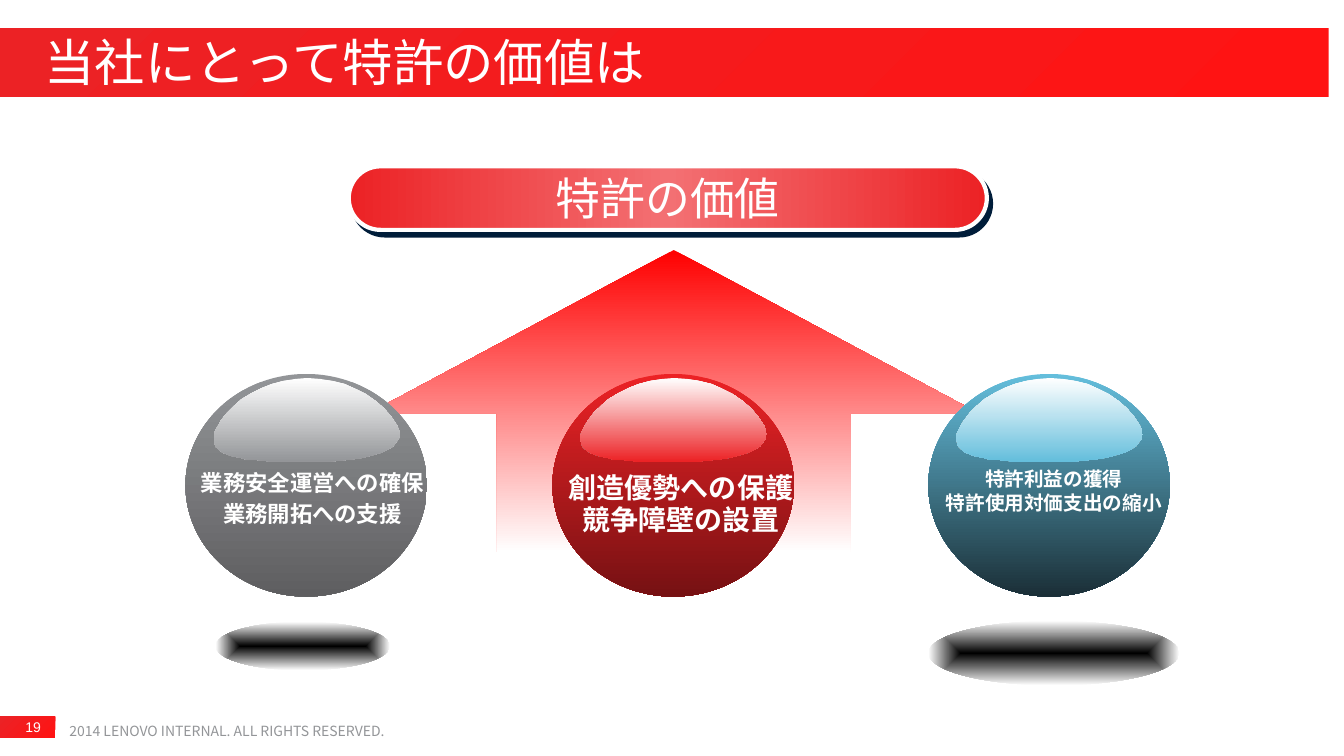
from lxml import etree
from pptx import Presentation
from pptx.dml.color import RGBColor
from pptx.enum.shapes import MSO_SHAPE
from pptx.enum.text import MSO_ANCHOR, PP_ALIGN
from pptx.oxml.ns import qn
from pptx.util import Pt

LEFT, CENTER = PP_ALIGN.LEFT, PP_ALIGN.CENTER
TOP, MIDDLE = MSO_ANCHOR.TOP, MSO_ANCHOR.MIDDLE
RECTANGLE, OVAL = MSO_SHAPE.RECTANGLE, MSO_SHAPE.OVAL
PILL, UP_ARROW = MSO_SHAPE.ROUNDED_RECTANGLE, MSO_SHAPE.UP_ARROW

WHITE = RGBColor(0xFF, 0xFF, 0xFF)
BLACK = RGBColor(0x00, 0x00, 0x00)
RED = RGBColor(0xEC, 0x22, 0x25)
BRIGHT_RED = RGBColor(0xFF, 0x13, 0x13)
PURE_RED = RGBColor(0xFF, 0x00, 0x00)
PALE_RED = RGBColor(0xF3, 0x70, 0x73)
DARK_RED = RGBColor(0x76, 0x11, 0x13)
GRAY = RGBColor(0x93, 0x95, 0x98)
DARK_GRAY = RGBColor(0x5E, 0x5E, 0x60)
BLUE = RGBColor(0x64, 0xBE, 0xDC)
DARK_BLUE = RGBColor(0x1B, 0x2F, 0x37)
NAVY = RGBColor(0x00, 0x1D, 0x3A)

JP, SC, LATIN = "Noto Sans CJK JP", "Noto Sans CJK SC", "Arial"

# Content
TITLE = "当社にとって特許の価値は"
GOAL = "特許の価値"
PAGE_NUMBER = "19"
COPYRIGHT = "2014 LENOVO INTERNAL. ALL RIGHTS RESERVED."

BALLS = [
    dict(left=132.5, light=GRAY, dark=DARK_GRAY,
         lines=["業務安全運営への確保", "業務開拓への支援"],
         text_box=(331.7, 181.4, 49.7),
         style=dict(size=16, font=JP, line_height=19, space_before=3.2),
         ground=(154, 444.2, 124.6, 34.6)),
    dict(left=394.6, light=RED, dark=DARK_RED,
         lines=["創造優勢への保護", "競争障壁の設置"],
         text_box=(332.7, 183.6, 55.4),
         style=dict(size=20, font=SC, line_height=23.5),
         ground=None),
    dict(left=663.1, light=BLUE, dark=DARK_BLUE,
         lines=["特許利益の獲得", "特許使用対価支出の縮小"],
         text_box=(330.1, 179.3, 41),
         style=dict(size=14, font=JP, line_height=17),
         ground=(663.1, 443.5, 179.3, 46.1)),
]
BALL_TOP, BALL_WIDTH, BALL_HEIGHT = 267.1, 172.5, 159

# Outline of the gloss on each ball, in units of GLOSS_UNIT points
GLOSS_UNIT = 0.72
GLOSS_OFFSET = (20, 2.9)
GLOSS = [
    (182, 47), (184, 52), (185, 56), (184, 60), (181, 64), (178, 68),
    (173, 71), (167, 74), (160, 76), (153, 78), (144, 80), (135, 81),
    (125, 82), (115, 83), (66, 83), (57, 83), (49, 82), (40, 81), (33, 81),
    (26, 79), (20, 78), (14, 76), (9, 74), (5, 71), (2, 68), (1, 65),
    (0, 61), (0, 57), (2, 52), (7, 43), (13, 35), (20, 28), (28, 21),
    (38, 15), (48, 10), (58, 6), (69, 3), (81, 1), (93, 0), (106, 1),
    (118, 3), (130, 6), (141, 11), (151, 16), (161, 23), (169, 30), (176, 38),
]


def paint_gradient(shape, colors, angle=None, path=None, focus=None):
    """Spread colors evenly, along an angle or outward from a focus."""
    shape.fill.solid()
    solid = shape._element.spPr.find(qn("a:solidFill"))
    gradient = etree.Element(qn("a:gradFill"), rotWithShape="1")
    stops = etree.SubElement(gradient, qn("a:gsLst"))
    for index, color in enumerate(colors):
        position = index * 100000 // (len(colors) - 1)
        stop = etree.SubElement(stops, qn("a:gs"), pos=str(position))
        etree.SubElement(stop, qn("a:srgbClr"), val=str(color))
    if path is None:
        etree.SubElement(gradient, qn("a:lin"), ang=str(angle * 60000), scaled="0")
    else:
        way = etree.SubElement(gradient, qn("a:path"), path=path)
        edges = {side: str(share * 1000) for side, share in zip("ltrb", focus)}
        etree.SubElement(way, qn("a:fillToRect"), **edges)
    solid.getparent().replace(solid, gradient)
    shape.line.fill.background()
    shape.shadow.inherit = False


def add_shape(kind, box, colors, **gradient):
    shape = slide.shapes.add_shape(kind, *map(Pt, box))
    paint_gradient(shape, colors, **gradient)
    return shape


def write(shape, lines, size, font, color=WHITE, bold=False, align=CENTER,
          anchor=TOP, wrap=True, insets=(7.2, 3.6), line_height=None,
          space_before=0):
    frame = shape.text_frame
    frame.word_wrap = wrap
    frame.vertical_anchor = anchor
    frame.margin_left = frame.margin_right = Pt(insets[0])
    frame.margin_top = frame.margin_bottom = Pt(insets[1])
    for index, line in enumerate(lines):
        paragraph = frame.add_paragraph() if index else frame.paragraphs[0]
        paragraph.alignment = align
        if line_height:
            paragraph.line_spacing = Pt(line_height)
        if index and space_before:
            paragraph.space_before = Pt(space_before)
        run = paragraph.add_run()
        run.text = line
        run.font.size = Pt(size)
        run.font.bold = bold
        run.font.color.rgb = color
        run.font.name = font
        etree.SubElement(run._r.get_or_add_rPr(), qn("a:ea"), typeface=font)


def add_text(box, lines, **style):
    write(slide.shapes.add_textbox(*map(Pt, box)), lines, **style)


def add_ball(ball):
    left = ball["left"]
    add_shape(OVAL, (left, BALL_TOP, BALL_WIDTH, BALL_HEIGHT),
              [ball["light"], ball["dark"]], angle=90)
    # Gloss
    points = [(Pt(left + GLOSS_OFFSET[0] + x * GLOSS_UNIT),
               Pt(BALL_TOP + GLOSS_OFFSET[1] + y * GLOSS_UNIT)) for x, y in GLOSS]
    builder = slide.shapes.build_freeform(*points[0])
    builder.add_line_segments(points[1:], close=True)
    paint_gradient(builder.convert_to_shape(), [WHITE, ball["light"]], angle=90)
    # Caption and shade on the ground
    add_text((left, *ball["text_box"]), ball["lines"], bold=True, **ball["style"])
    if ball["ground"]:
        add_shape(OVAL, ball["ground"], [BLACK, WHITE],
                  path="shape", focus=(50, 50, 50, 50))


presentation = Presentation()
presentation.slide_width, presentation.slide_height = Pt(960), Pt(540)
slide = presentation.slides.add_slide(presentation.slide_layouts[6])

# Title bar and footer
for bar in [(0, 512, 39.6, 15.1), (0, 20.2, 949, 49)]:
    add_shape(RECTANGLE, bar, [RED, BRIGHT_RED], path="circle", focus=(0, 0, 100, 100))
add_text((7.9, 513.4, 31.7, 12.2), [PAGE_NUMBER], size=10, font=LATIN,
         anchor=MIDDLE, wrap=False, insets=(9.4, 0))
add_text((42.5, 512.6, 303.8, 12.2), [COPYRIGHT], size=10, font=SC,
         color=GRAY, align=LEFT)
add_text((22.3, 20.2, 924.5, 46.8), [TITLE], size=36, font=JP,
         align=LEFT, anchor=MIDDLE, insets=(9.4, 5))

# Arrow toward the goal
arrow = add_shape(UP_ARROW, (263.5, 178.6, 435.6, 216), [PURE_RED, WHITE], angle=90)
arrow.adjustments[0], arrow.adjustments[1] = 0.58, 0.54

# Goal pill with its hard shadow
pill = add_shape(PILL, (249.1, 118.8, 455.8, 45.4), [RED, PALE_RED, RED], angle=0)
pill.adjustments[0] = 0.5
pill.line.color.rgb = WHITE
pill.line.width = Pt(3)
effects = pill._element.spPr.find(qn("a:effectLst"))
shadow = etree.SubElement(effects, qn("a:outerShdw"), blurRad="0", dist=str(Pt(5)),
                          dir=str(53 * 60000), algn="ctr", rotWithShape="0")
etree.SubElement(shadow, qn("a:srgbClr"), val=str(NAVY))
write(pill, [GOAL], size=32, font=JP, anchor=MIDDLE, wrap=False)

# Balls
for ball in BALLS:
    add_ball(ball)

presentation.save("out.pptx")
